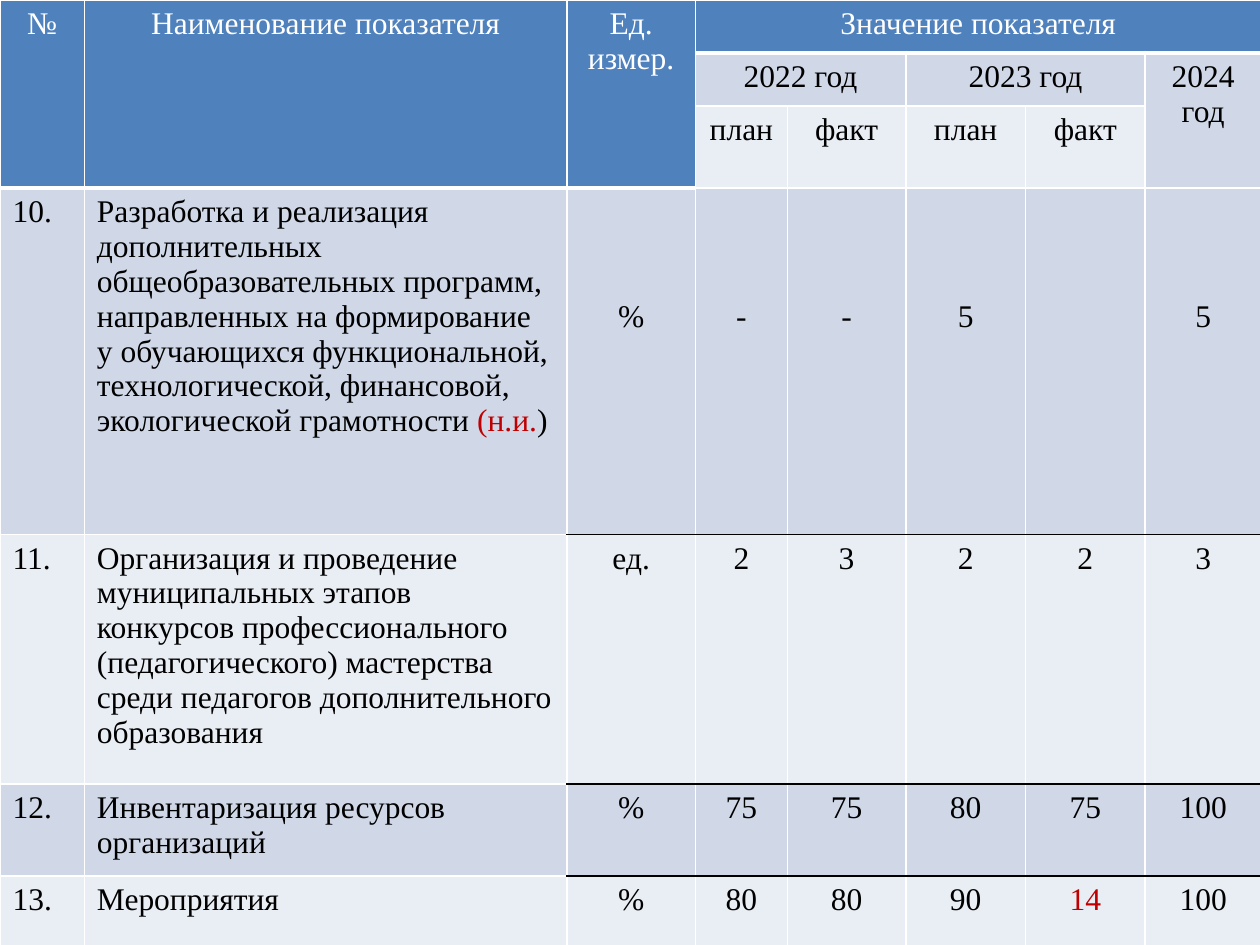
import pptx
import pptx.util
import pptx.dml.color
import pptx.enum.text
import pptx.oxml
import pptx.oxml.ns

RGBColor = pptx.dml.color.RGBColor
Inches = pptx.util.Inches
Pt = pptx.util.Pt
ALIGN = pptx.enum.text.PP_ALIGN

WHITE = RGBColor(0xFF, 0xFF, 0xFF)
BLACK = RGBColor(0, 0, 0)
RED = RGBColor(0xC0, 0, 0)
BLUE = RGBColor(0x4F, 0x81, 0xBD)
DARK_BAND = RGBColor(0xD0, 0xD8, 0xE8)
LIGHT_BAND = RGBColor(0xE9, 0xED, 0xF4)

FONT = "Times New Roman"
FONT_SIZE = Pt(18)
COLUMNS = [0.67, 3.83, 1.02, 0.73, 0.94, 0.95, 0.95, 0.92]
ROWS = [0.42, 0.42, 0.42, 2.75, 1.98, 0.73, 0.79]
HEADER_ROWS = 3
FIRST_VALUE_COLUMN = 2
LOWERED_MARGIN = Inches(0.88)

HEADERS = [
    (0, 0, 3, 1, "№"),
    (0, 1, 3, 1, "Наименование показателя"),
    (0, 2, 3, 1, "Ед. измер."),
    (0, 3, 1, 5, "Значение показателя"),
    (1, 3, 1, 2, "2022 год"),
    (1, 5, 1, 2, "2023 год"),
    (1, 7, 2, 1, "2024 год"),
    (2, 3, 1, 1, "план"),
    (2, 4, 1, 1, "факт"),
    (2, 5, 1, 1, "план"),
    (2, 6, 1, 1, "факт"),
]

INDICATORS = [
    ["10.", [("Разработка и реализация дополнительных общеобразовательных программ, "
              "направленных на формирование у обучающихся функциональной, "
              "технологической, финансовой, экологической грамотности ", BLACK),
             ("(н.и.", RED), (")", BLACK)],
     "%", "-", "-", "5", "", "5"],
    ["11.", "Организация и проведение муниципальных этапов конкурсов "
            "профессионального (педагогического) мастерства среди педагогов "
            "дополнительного образования",
     "ед.", "2", "3", "2", "2", "3"],
    ["12.", "Инвентаризация ресурсов организаций",
     "%", "75", "75", "80", "75", "100"],
    ["13.", "Мероприятия",
     "%", "80", "80", "90", [("14", RED)], "100"],
]


def write(cell, content, color=BLACK, alignment=ALIGN.CENTER):
    para = cell.text_frame.paragraphs[0]
    para.alignment = alignment
    para.font.name = FONT
    para.font.size = FONT_SIZE
    para.font.bold = False
    if not content:
        return
    spans = [(content, color)] if isinstance(content, str) else content
    for text, span_color in spans:
        span = para.add_run()
        span.text = text
        span.font.name = FONT
        span.font.size = FONT_SIZE
        span.font.bold = False
        span.font.color.rgb = span_color


def add_border(cell, side, color, width=1):
    properties = cell._tc.get_or_add_tcPr()
    properties.append(pptx.oxml.parse_xml(
        f'<a:ln{side} {pptx.oxml.ns.nsdecls("a")} w="{Pt(width)}">'
        f'<a:solidFill><a:srgbClr val="{color}"/></a:solidFill></a:ln{side}>'))


def paint(cell, row, column):
    is_value = column >= FIRST_VALUE_COLUMN
    black_top = is_value and row > HEADER_ROWS
    black_bottom = is_value and HEADER_ROWS <= row < len(ROWS) - 1
    is_header = row == 0 or (row < HEADER_ROWS and column <= FIRST_VALUE_COLUMN)
    add_border(cell, "L", WHITE)
    add_border(cell, "R", WHITE)
    add_border(cell, "T", BLACK if black_top else WHITE)
    add_border(cell, "B", BLACK if black_bottom else WHITE, 3 if row == 0 else 1)
    cell.fill.solid()
    band = DARK_BAND if row % 2 else LIGHT_BAND
    cell.fill.fore_color.rgb = BLUE if is_header else band


def add_indicator_table(page, width, height):
    frame = page.shapes.add_table(len(ROWS), len(COLUMNS), 0, 0, width, height)
    table = frame.table
    table.first_row = False
    table.horz_banding = False
    for column, share in zip(table.columns, COLUMNS):
        column.width = Inches(share)
    for row, share in zip(table.rows, ROWS):
        row.height = Inches(share)
    for row in range(len(ROWS)):
        for column in range(len(COLUMNS)):
            paint(table.cell(row, column), row, column)
    return table


def fill_headers(table):
    for row, column, height, width, text in HEADERS:
        cell = table.cell(row, column)
        if height * width > 1:
            cell.merge(table.cell(row + height - 1, column + width - 1))
        write(cell, text, WHITE if row == 0 else BLACK)


def fill_indicators(table):
    for row, indicator in enumerate(INDICATORS, HEADER_ROWS):
        for column, content in enumerate(indicator):
            cell = table.cell(row, column)
            is_value = column >= FIRST_VALUE_COLUMN
            write(cell, content, alignment=ALIGN.CENTER if is_value else ALIGN.LEFT)
            if is_value and row == HEADER_ROWS:
                cell.margin_top = LOWERED_MARGIN


def main():
    deck = pptx.Presentation()
    deck.slide_width = Inches(10)
    deck.slide_height = Inches(7.5)
    page = deck.slides.add_slide(deck.slide_layouts[6])
    table = add_indicator_table(page, deck.slide_width, deck.slide_height)
    fill_headers(table)
    fill_indicators(table)
    deck.save("out.pptx")


if __name__ == "__main__":
    main()
